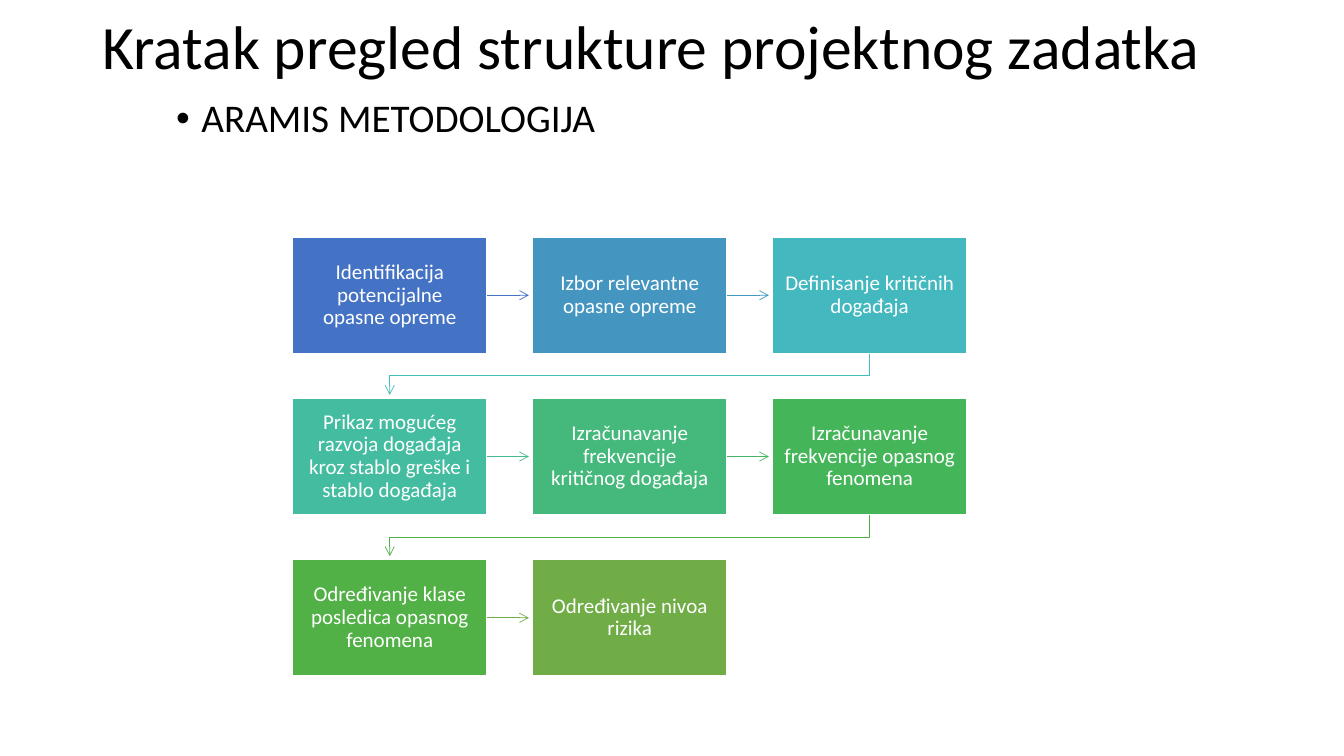
import pptx
import pptx.util
import pptx.dml.color
import pptx.enum.shapes
import pptx.enum.text
import pptx.oxml
import pptx.oxml.ns
import lxml.etree

Pt = pptx.util.Pt
ANCHOR = pptx.enum.text.MSO_ANCHOR
ALIGN = pptx.enum.text.PP_ALIGN
COLUMNS = 3
STEP_WIDTH, STEP_HEIGHT = 139.2, 83.4
PITCH_X, PITCH_Y = 171.4, 115.2
ARROW_GAP = 2.4

STEPS = [
    ("Identifikacija potencijalne opasne opreme", "4472C4", "4472C4"),
    ("Izbor relevantne opasne opreme", "4496C1", "449BC1"),
    ("Definisanje kritičnih događaja", "43B8BF", "43BEB9"),
    ("Prikaz mogućeg razvoja događaja kroz stablo greške i stablo događaja", "43BCA0", "43BB8D"),
    ("Izračunavanje frekvencije kritičnog događaja", "44B97B", "45B664"),
    ("Izračunavanje frekvencije opasnog fenomena", "45B559", "4CB146"),
    ("Određivanje klase posledica opasnog fenomena", "52B146", "70AD47"),
    ("Određivanje nivoa rizika", "70AD47", None),
]


def rgb(hex_color):
    """Turn a hex string into a colour."""
    return pptx.dml.color.RGBColor.from_string(hex_color)


def format_paragraph(paragraph, size, color, align):
    """Set the font, spacing and alignment of a paragraph."""
    paragraph.font.name = "Calibri"
    paragraph.font.size = Pt(size)
    paragraph.font.color.rgb = rgb(color)
    paragraph.alignment = align
    paragraph.line_spacing = 0.9


def add_title(slide, left, top, width, height):
    """Place the slide title in its box."""
    title = slide.shapes.title
    title.left, title.top, title.width, title.height = map(Pt, (left, top, width, height))
    frame = title.text_frame
    frame.text = "Kratak pregled strukture projektnog zadatka"
    frame.auto_size = pptx.enum.text.MSO_AUTO_SIZE.NONE
    frame.vertical_anchor = ANCHOR.MIDDLE
    format_paragraph(frame.paragraphs[0], 44, "000000", ALIGN.LEFT)


def add_methodology(slide, left, top, width, height):
    """Place the bulleted name of the methodology in its box."""
    methodology = slide.shapes.add_textbox(*map(Pt, (left, top, width, height)))
    frame = methodology.text_frame
    frame.word_wrap = True
    frame.text = "ARAMIS METODOLOGIJA"
    paragraph = frame.paragraphs[0]
    format_paragraph(paragraph, 28, "000000", ALIGN.LEFT)
    paragraph.space_before = Pt(10)
    properties = paragraph._p.get_or_add_pPr()
    properties.set("marL", str(Pt(18)))
    properties.set("indent", str(-Pt(18)))
    for tag, name, value in (("a:buFont", "typeface", "Arial"), ("a:buChar", "char", "•")):
        bullet = pptx.oxml.ns.qn(tag)
        lxml.etree.SubElement(properties, bullet).set(name, value)


def add_step(slide, left, top, text, fill):
    """Place one step of the methodology and return it."""
    step = slide.shapes.add_shape(
        pptx.enum.shapes.MSO_SHAPE.RECTANGLE, *map(Pt, (left, top, STEP_WIDTH, STEP_HEIGHT)))
    step.shadow.inherit = False
    step.fill.solid()
    step.fill.fore_color.rgb = rgb(fill)
    step.line.color.rgb = rgb("FFFFFF")
    step.line.width = Pt(1)
    frame = step.text_frame
    frame.margin_left = frame.margin_right = Pt(8.4)
    frame.margin_top = frame.margin_bottom = Pt(8.4)
    frame.word_wrap = True
    frame.vertical_anchor = ANCHOR.MIDDLE
    frame.text = text
    format_paragraph(frame.paragraphs[0], 15, "FFFFFF", ALIGN.CENTER)
    return step


def style_arrow(arrow, color):
    """Give a line its colour, width and arrowhead, without a shadow."""
    arrow.line.color.rgb = rgb(color)
    arrow.line.width = Pt(0.5)
    head = pptx.oxml.ns.qn("a:tailEnd")
    lxml.etree.SubElement(arrow.line._get_or_add_ln(), head).set("type", "arrow")
    lxml.etree.SubElement(arrow._element.spPr, pptx.oxml.ns.qn("a:effectLst"))


def add_row_arrow(slide, step, following, color):
    """Draw an arrow from a step to the next one in its row."""
    middle = step.top + step.height // 2
    arrow = slide.shapes.add_connector(
        pptx.enum.shapes.MSO_CONNECTOR.STRAIGHT,
        step.left + step.width, middle, following.left - Pt(ARROW_GAP), middle)
    arrow.begin_connect(step, 3)
    style_arrow(arrow, color)


def add_wrap_arrow(slide, step, following, color):
    """Draw a bent arrow from the end of a row to the start of the next."""
    start_x = step.left + step.width // 2
    end_x = following.left + following.width // 2
    bottom = step.top + step.height
    bend = (bottom + following.top) // 2
    outline = slide.shapes.build_freeform(start_x, bottom)
    outline.add_line_segments(
        [(start_x, bend), (end_x, bend), (end_x, following.top - Pt(ARROW_GAP))], close=False)
    arrow = outline.convert_to_shape()
    arrow.fill.background()
    style_arrow(arrow, color)


def add_flow(slide, left, top):
    """Lay the steps out row by row and join them in order."""
    steps = []
    for index, (text, fill, _) in enumerate(STEPS):
        row, column = divmod(index, COLUMNS)
        steps.append(add_step(slide, left + column * PITCH_X, top + row * PITCH_Y, text, fill))
    for step, following, (_, _, color) in zip(steps, steps[1:], STEPS):
        add_arrow = add_row_arrow if step.top == following.top else add_wrap_arrow
        add_arrow(slide, step, following, color)


def main():
    """Build the slide and save it."""
    presentation = pptx.Presentation()
    presentation.slide_width, presentation.slide_height = Pt(960), Pt(540)
    slide = presentation.slides.add_slide(presentation.slide_layouts[5])
    add_title(slide, 66, 3.6, 828, 63.4)
    add_methodology(slide, 118.8, 67, 828, 342.7)
    add_flow(slide, 208.8, 169.2)
    presentation.save("out.pptx")


if __name__ == "__main__":
    main()
